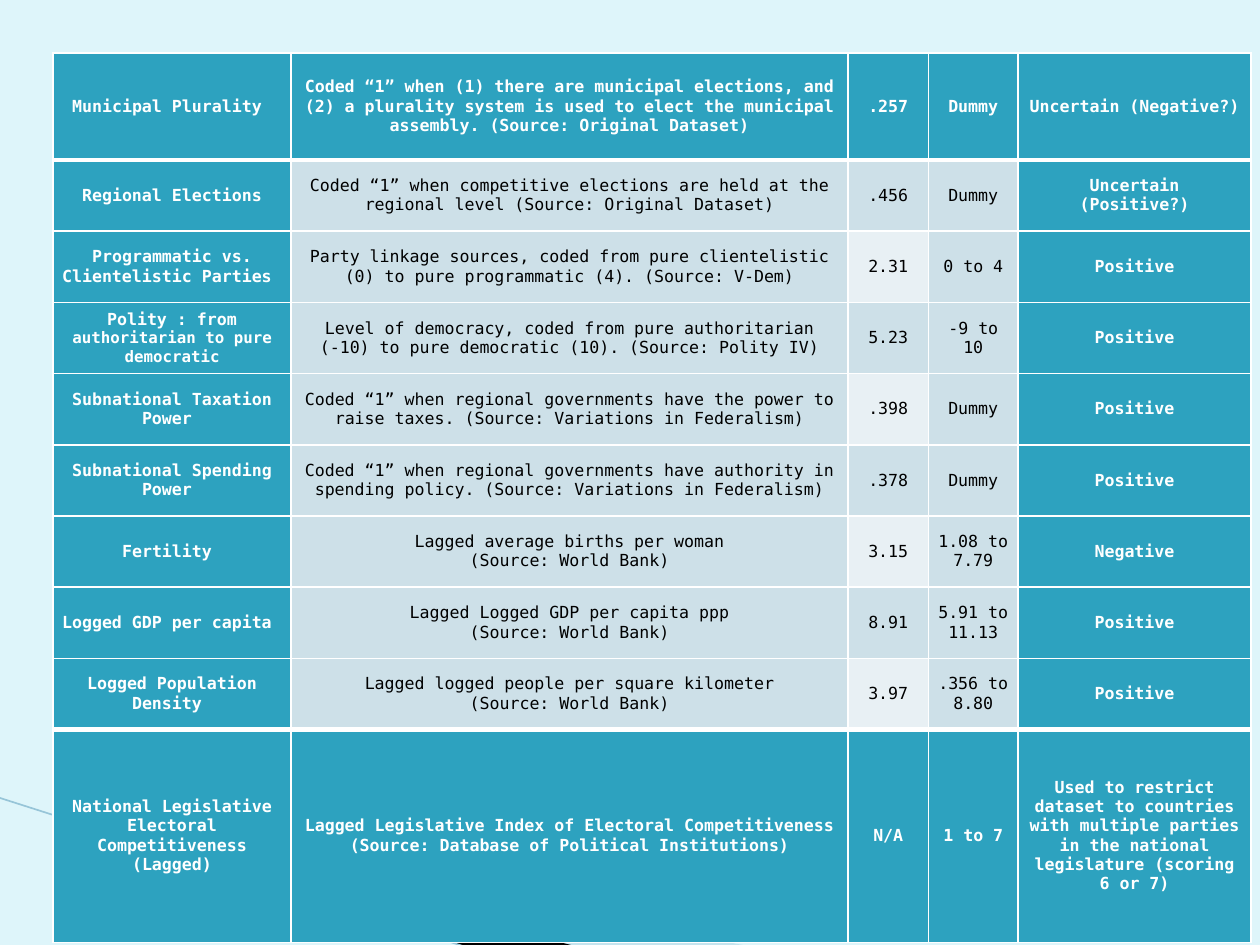
from dataclasses import dataclass

from lxml import etree
from pptx import Presentation
from pptx import util as u
from pptx.dml.color import RGBColor
from pptx.enum import shapes, text
from pptx.oxml.ns import qn


@dataclass(frozen=True)
class Theme:
    font: str = "DejaVu Sans Mono"
    size: float = 9.5
    small: float = 9
    background: str = "DEF5FA"
    accent: str = "2DA2BF"
    band: str = "CDE0E8"
    light: str = "E8F0F4"
    white: str = "FFFFFF"
    black: str = "000000"
    ribbon: str = "A0CBDC"
    thread: str = "97C5D8"
    thin: float = 1
    thick: float = 3


COL_WIDTHS = [1.89, 4.42, 0.64, 0.71, 1.85]
ROW_HEIGHTS = [0.85] + [0.565] * 8 + [1.69]

ROWS = [
    ("Municipal Plurality ",
     "Coded “1” when (1) there are municipal elections, and (2) a plurality system is used "
     "to elect the municipal assembly. (Source: Original Dataset)",
     ".257", "Dummy", "Uncertain (Negative?)"),
    ("Regional Elections",
     "Coded “1” when competitive elections are held at the regional level "
     "(Source: Original Dataset)",
     ".456", "Dummy", "Uncertain\n(Positive?)"),
    ("Programmatic vs. Clientelistic Parties ",
     "Party linkage sources, coded from pure clientelistic (0) to pure programmatic (4). "
     "(Source: V-Dem)",
     "2.31", "0 to 4", "Positive"),
    (("Polity : from ", "authoritarian to pure democratic"),
     "Level of democracy, coded from pure authoritarian (-10) to pure democratic (10). "
     "(Source: Polity IV)",
     "5.23", "-9 to 10", "Positive"),
    ("Subnational Taxation Power ",
     "Coded “1” when regional governments have the power to raise taxes. "
     "(Source: Variations in Federalism)",
     ".398", "Dummy", "Positive"),
    ("Subnational Spending Power ",
     "Coded “1” when regional governments have authority in spending policy. "
     "(Source: Variations in Federalism)",
     ".378", "Dummy", "Positive"),
    ("Fertility ", "Lagged average births per woman\n(Source: World Bank)",
     "3.15", "1.08 to\n7.79", "Negative"),
    ("Logged GDP per capita ", "Lagged Logged GDP per capita ppp\n(Source: World Bank)",
     "8.91", "5.91 to 11.13", "Positive"),
    ("Logged Population Density ",
     "Lagged logged people per square kilometer\n(Source: World Bank)",
     "3.97", ".356 to 8.80", "Positive"),
    ("National Legislative Electoral Competitiveness (Lagged)",
     "Lagged Legislative Index of Electoral Competitiveness "
     "(Source: Database of Political Institutions)",
     "N/A", "1 to 7",
     "Used to restrict dataset to countries with multiple parties in the national "
     "legislature (scoring 6 or 7)"),
]


def rgb(color):
    return RGBColor.from_string(color)


class SlideBuilder:
    def __init__(self, slide, theme):
        self.s = slide
        self.theme = theme
        fill = slide.background.fill
        fill.solid()
        fill.fore_color.rgb = rgb(theme.background)

    def freeform(self, points, color, alpha=None):
        """Draw a closed outline; alpha is the opacity in percent."""
        pts = [(u.Inches(x), u.Inches(y)) for x, y in points]
        builder = self.s.shapes.build_freeform(*pts[0])
        builder.add_line_segments(pts[1:], close=True)
        sp = builder.convert_to_shape()
        sp.shadow.inherit = False
        sp.line.fill.background()
        sp.fill.solid()
        sp.fill.fore_color.rgb = rgb(color)
        if alpha is not None:
            clr = sp.fill._xPr.find(".//" + qn("a:srgbClr"))
            etree.SubElement(clr, qn("a:alpha"), val=str(alpha * 1000))

    def line(self, start, end, color, width):
        ends = [u.Inches(v) for v in (*start, *end)]
        cx = self.s.shapes.add_connector(shapes.MSO_CONNECTOR.STRAIGHT, *ends)
        cx.line.color.rgb = rgb(color)
        cx.line.width = u.Pt(width)
        etree.SubElement(cx._element.spPr, qn("a:effectLst"))

    def table(self, left, top, widths, heights, rows):
        frame = self.s.shapes.add_table(
            len(heights), len(widths), u.Inches(left), u.Inches(top),
            u.Inches(sum(widths)), u.Inches(sum(heights)))
        tbl = frame.table
        for col, width in zip(tbl.columns, widths):
            col.width = u.Inches(width)
        for row, height in zip(tbl.rows, heights):
            row.height = u.Inches(height)
        last_row, last_col = len(heights) - 1, len(widths) - 1
        for i, row in enumerate(rows):
            for j, content in enumerate(row):
                cell = tbl.cell(i, j)
                strong = i in (0, last_row) or j in (0, last_col)
                self.borders(cell, thick_top=i in (1, last_row),
                             thick_bottom=i in (0, last_row - 1))
                cell.fill.solid()
                cell.fill.fore_color.rgb = rgb(self.cell_color(i, j, strong))
                self.cell_text(cell, content, strong)

    def cell_color(self, i, j, strong):
        if strong:
            return self.theme.accent
        return self.theme.light if j == 2 and i % 2 == 0 else self.theme.band

    def borders(self, cell, thick_top, thick_bottom):
        t = self.theme
        tc_pr = cell._tc.get_or_add_tcPr()
        for side, thick in (("L", False), ("R", False), ("T", thick_top), ("B", thick_bottom)):
            width = u.Pt(t.thick if thick else t.thin)
            ln = etree.SubElement(tc_pr, qn("a:ln" + side), w=str(width))
            fill = etree.SubElement(ln, qn("a:solidFill"))
            etree.SubElement(fill, qn("a:srgbClr"), val=t.white)

    def cell_text(self, cell, content, strong):
        """Write a cell; a tuple holds a normal run followed by a smaller one."""
        t = self.theme
        layout = {"vertical_anchor": text.MSO_ANCHOR.MIDDLE,
                  "margin_left": u.Inches(0.07), "margin_right": u.Inches(0.07),
                  "margin_top": 0, "margin_bottom": 0}
        for name, value in layout.items():
            setattr(cell, name, value)
        tf = cell.text_frame
        paragraphs = [content] if isinstance(content, tuple) else [
            (part,) for part in content.split("\n")]
        for k, runs in enumerate(paragraphs):
            p = tf.add_paragraph() if k else tf.paragraphs[0]
            p.alignment = text.PP_ALIGN.CENTER
            for words, size in zip(runs, (t.size, t.small)):
                r = p.add_run()
                r.text = words
                for name, value in {"name": t.font, "size": u.Pt(size), "bold": strong}.items():
                    setattr(r.font, name, value)
                r.font.color.rgb = rgb(t.white if strong else t.black)


def main():
    theme = Theme()
    prs = Presentation()
    prs.slide_width, prs.slide_height = u.Inches(10), u.Inches(7.5)
    blank = prs.slide_layouts[6]
    b = SlideBuilder(prs.slides.add_slide(blank), theme)
    b.freeform([(0.55, 6.51), (5.95, 7.51), (4.56, 7.51), (0.55, 6.5)], theme.ribbon, 40)
    b.freeform([(0.53, 6.49), (4.57, 7.51), (3.72, 7.52), (0.54, 6.5)], theme.black)
    b.line((-0.01, 6.33), (3.71, 7.52), theme.thread, 0.95)
    b.table(0.42, 0.42, COL_WIDTHS, ROW_HEIGHTS, ROWS)
    prs.save("out.pptx")


if __name__ == "__main__":
    main()
